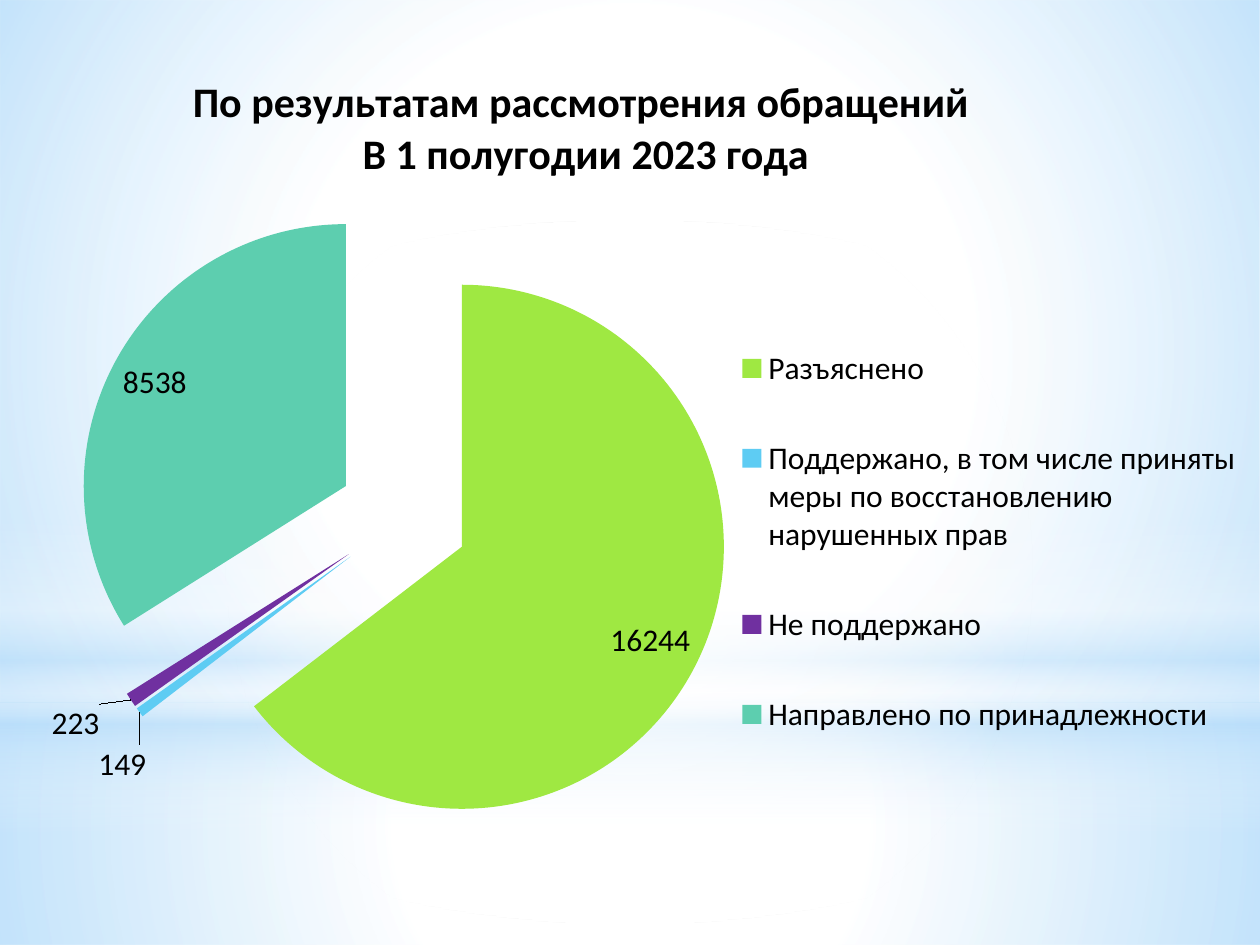
from lxml import etree
from pptx import Presentation
from pptx import util as u
from pptx.chart import data
from pptx.dml import color
from pptx.enum import chart as ch, shapes
from pptx.oxml import parse_xml
from pptx.oxml import ns

C = {"white": "FFFFFF", "sky": "B4DCFA", "text": "000000", "green": "9FE842",
     "blue": "5ECCF3", "purple": "7030A0", "teal": "5DCEAF"}


def add_gradient(sp, stops, shade):
    gs = "".join(f'<a:gs pos="{pos * 1000}"><a:srgbClr val="{C[name]}">'
                 f'<a:alpha val="{alpha * 1000}"/></a:srgbClr></a:gs>'
                 for pos, name, alpha in stops)
    sp.fill.background()
    old = sp._element.spPr.find(ns.qn("a:noFill"))
    old.getparent().replace(old, parse_xml(
        f'<a:gradFill {ns.nsdecls("a")} rotWithShape="1"><a:gsLst>{gs}</a:gsLst>{shade}</a:gradFill>'))


def set_layout(parent, after, **values):
    for old in parent.findall(ns.qn("c:layout")):
        parent.remove(old)
    layout = etree.Element(ns.qn("c:layout"))
    manual = etree.SubElement(layout, ns.qn("c:manualLayout"))
    for tag, value in values.items():
        etree.SubElement(manual, ns.qn("c:" + tag)).set("val", str(value))
    if after is None:
        parent.insert(0, layout)
    else:
        parent.find(ns.qn(after)).addnext(layout)


prs = Presentation()
prs.slide_width, prs.slide_height = u.Cm(25.4), u.Cm(19.05)
s = prs.slides.add_slide(prs.slide_layouts[6])

radial = '<a:path path="circle"><a:fillToRect l="50000" t="50000" r="50000" b="50000"/></a:path>'
linear = '<a:lin ang="5400000" scaled="0"/>'
rect, oval = shapes.MSO_SHAPE.RECTANGLE, shapes.MSO_SHAPE.OVAL
backdrop = [
    (rect, 14.17, 4.88, radial, [(0, "white", 91), (37, "white", 76), (100, "sky", 79)]),
    (rect, 0, 14.17, radial, [(0, "white", 89), (48, "white", 62), (100, "sky", 79)]),
    (rect, 10.46, 6.35, linear, [(0, "white", 0), (29, "white", 30), (45, "sky", 40),
                                 (55, "white", 26), (65, "sky", 60), (100, "white", 0)]),
    (oval, 4.45, 14.17, radial, [(0, "white", 100), (56, "white", 0)]),
]
for kind, top, height, shade, stops in backdrop:
    sp = s.shapes.add_shape(kind, 0, u.Cm(top), prs.slide_width, u.Cm(height))
    sp.shadow.inherit = False
    sp.line.fill.background()
    add_gradient(sp, stops, shade)

results = [
    ("Разъяснено", 16244, "green"),
    ("Поддержано, в том числе приняты меры по восстановлению нарушенных прав", 149, "blue"),
    ("Не поддержано", 223, "purple"),
    ("Направлено по принадлежности ", 8538, "teal"),
]
cd = data.CategoryChartData()
cd.categories = [name for name, _, _ in results]
cd.add_series("Series 1", [value for _, value, _ in results])
chart = s.shapes.add_chart(ch.XL_CHART_TYPE.PIE, 0, u.Cm(0.13), prs.slide_width,
                           u.Cm(18.92), cd).chart
chart.font.name, chart.font.size = "Calibri", u.Pt(18)
chart.font.color.rgb = color.RGBColor.from_string(C["text"])

chart.has_title = True
tf = chart.chart_title.text_frame
tf.text = "По результатам рассмотрения обращений \nВ 1 полугодии 2023 года"
for p in tf.paragraphs:
    p.font.name, p.font.size, p.font.bold = "Calibri", u.Pt(24), True
    p.font.color.rgb = color.RGBColor.from_string(C["text"])
chart.chart_title.include_in_layout = True
set_layout(chart.chart_title._element, "c:tx", xMode="edge", yMode="edge", x=0.15, y=0.07)

chart.has_legend = True
chart.legend.position = ch.XL_LEGEND_POSITION.RIGHT
chart.legend.include_in_layout = False
set_layout(chart.legend._element, "c:legendPos", xMode="edge", yMode="edge",
           x=0.58, y=0.31, w=0.41, h=0.52)

plot = chart.plots[0]
plot.vary_by_categories = True
set_layout(plot._element.getparent(), None, layoutTarget="inner", xMode="edge", yMode="edge",
           x=0.06, y=0.19, w=0.52, h=0.71)

ser = plot.series[0]
explosion = etree.Element(ns.qn("c:explosion"))
explosion.set("val", "25")
ser._element.find(ns.qn("c:tx")).addnext(explosion)
for i, (_, _, name) in enumerate(results):
    fill = ser.points[i].format.fill
    fill.solid()
    fill.fore_color.rgb = color.RGBColor.from_string(C[name])

labels = ser.data_labels
labels.show_value = True
labels.position = ch.XL_LABEL_POSITION.INSIDE_END
leader = labels._element.find(ns.qn("c:showLeaderLines"))
if leader is None:
    leader = etree.SubElement(labels._element, ns.qn("c:showLeaderLines"))
leader.set("val", "1")
for i, dx, dy in [(1, 0.01, 0.03), (2, -0.02, 0)]:
    label = ser.points[i].data_label
    label.position = ch.XL_LABEL_POSITION.OUTSIDE_END
    dl = next(d for d in labels._element.findall(ns.qn("c:dLbl"))
              if d.find(ns.qn("c:idx")).get("val") == str(i))
    dl.find(ns.qn("c:showPercent")).set("val", "0")
    set_layout(dl, "c:idx", x=dx, y=dy)

prs.save("out.pptx")
